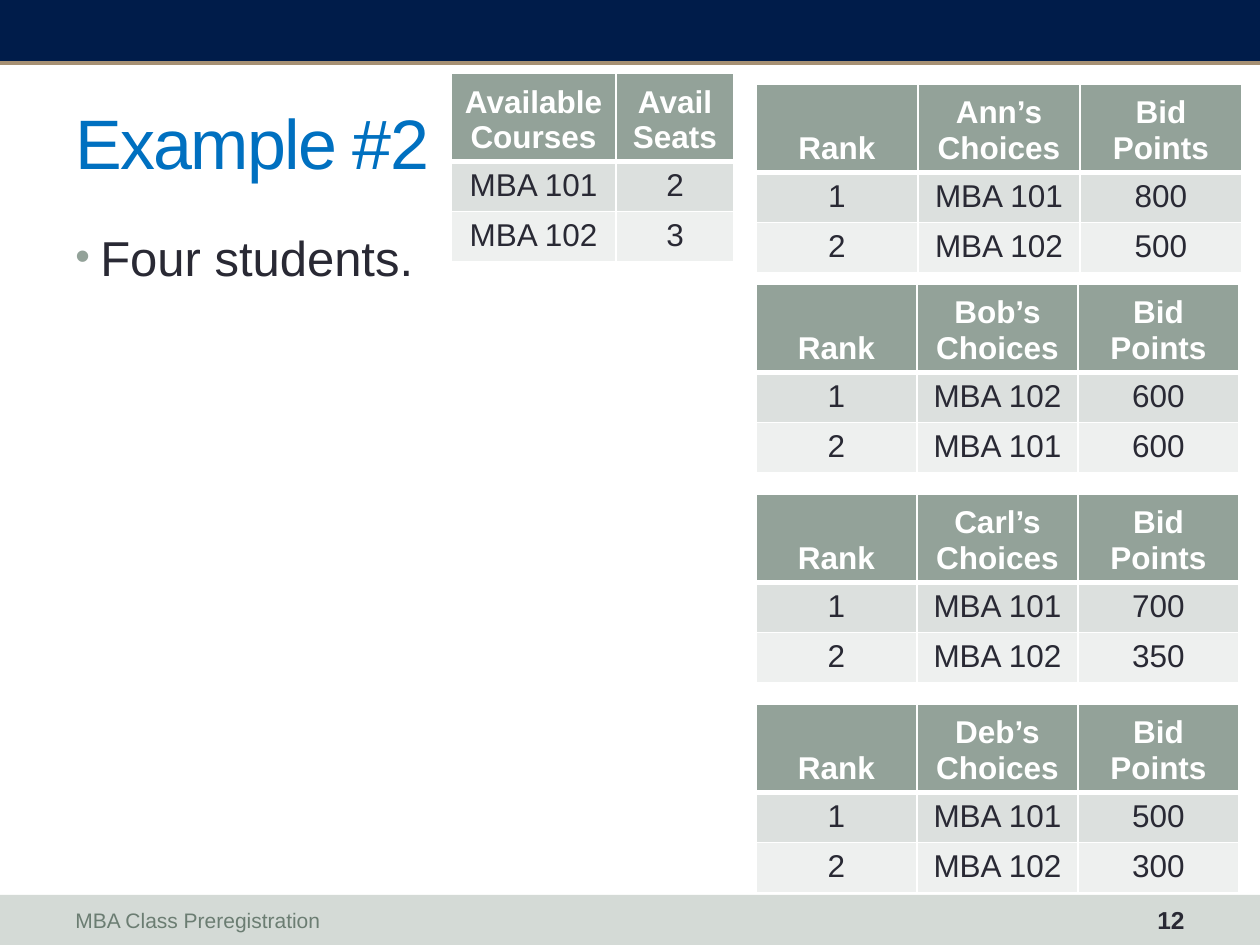
from dataclasses import dataclass

from lxml.etree import SubElement
from pptx import Presentation
from pptx.dml.color import RGBColor
from pptx.enum.shapes import MSO_CONNECTOR as Connector, MSO_SHAPE as Shape
from pptx.enum.text import MSO_ANCHOR as Anchor, PP_ALIGN as Align
from pptx.oxml.ns import qn
from pptx.util import Pt

EMU_PER_PX = 914400 / 126
SLIDE_WIDTH, SLIDE_HEIGHT = 1260, 945


@dataclass(frozen=True)
class Theme:
    font: str = "Arial"
    navy: str = "001C4A"
    gold: str = "A69073"
    footer_band: str = "D4DAD6"
    footer_text: str = "6B7D72"
    title: str = "0070C0"
    text: str = "292934"
    white: str = "FFFFFF"
    accent: str = "93A299"
    rows: tuple = ("DCE0DE", "EEF0EF")
    title_size: int = 40
    body_size: int = 28
    table_size: int = 18
    number_size: int = 14
    footer_size: int = 12


THEME = Theme()


def px(length):
    return round(length * EMU_PER_PX)


def box(*lengths):
    return [px(length) for length in lengths]


def style_runs(paragraph, size, color, bold=False):
    for run in paragraph.runs:
        run.font.name = THEME.font
        run.font.size = Pt(size)
        run.font.bold = bold
        run.font.color.rgb = RGBColor.from_string(color)


def add_band(slide, top, height, color):
    band = slide.shapes.add_shape(Shape.RECTANGLE, *box(0, top, SLIDE_WIDTH, height))
    band.shadow.inherit = False
    band.fill.solid()
    band.fill.fore_color.rgb = RGBColor.from_string(color)
    band.line.fill.background()


def add_rule(slide, y, color, width):
    rule = slide.shapes.add_connector(Connector.STRAIGHT, *box(0, y, SLIDE_WIDTH, y))
    rule.line.color.rgb = RGBColor.from_string(color)
    rule.line.width = Pt(width)
    SubElement(rule._element.spPr, qn("a:effectLst"))


def add_text(slide, bounds, text, size, color, bold=False,
             align=Align.LEFT, anchor=Anchor.MIDDLE):
    frame = slide.shapes.add_textbox(*box(*bounds)).text_frame
    frame.word_wrap = True
    frame.vertical_anchor = anchor
    frame.text = text
    paragraph = frame.paragraphs[0]
    paragraph.alignment = align
    style_runs(paragraph, size, color, bold)
    return paragraph


def add_bullet(paragraph, indent):
    properties = paragraph._p.get_or_add_pPr()
    properties.set("marL", str(px(indent)))
    properties.set("indent", str(-px(indent)))
    color = SubElement(properties, qn("a:buClr"))
    SubElement(color, qn("a:srgbClr"), val=THEME.accent)
    SubElement(properties, qn("a:buSzPct"), val="85000")
    SubElement(properties, qn("a:buFont"), typeface=THEME.font)
    SubElement(properties, qn("a:buChar"), char="•")


def add_borders(cell, top, bottom):
    properties = cell._tc.get_or_add_tcPr()
    for side, width in (("L", 1), ("R", 1), ("T", top), ("B", bottom)):
        line = SubElement(properties, qn(f"a:ln{side}"), w=str(Pt(width)))
        fill = SubElement(line, qn("a:solidFill"))
        SubElement(fill, qn("a:srgbClr"), val=THEME.white)


def format_cell(cell, text, row):
    header = row == 0
    add_borders(cell, top=3 if row == 1 else 1, bottom=3 if header else 1)
    cell.fill.solid()
    color = THEME.accent if header else THEME.rows[(row - 1) % 2]
    cell.fill.fore_color.rgb = RGBColor.from_string(color)
    cell.vertical_anchor = Anchor.BOTTOM if header else Anchor.TOP
    cell.text_frame.text = text
    paragraph = cell.text_frame.paragraphs[0]
    paragraph.alignment = Align.CENTER
    style_runs(paragraph, THEME.table_size, THEME.white if header else THEME.text, header)


def add_table(slide, left, top, column_widths, rows):
    heights = [82] + [48] * (len(rows) - 1)
    bounds = box(left, top, sum(column_widths), sum(heights))
    table = slide.shapes.add_table(len(rows), len(column_widths), *bounds).table
    for column, width in zip(table.columns, column_widths):
        column.width = px(width)
    for row, (values, height) in enumerate(zip(rows, heights)):
        table.rows[row].height = px(height)
        for column, text in enumerate(values):
            format_cell(table.cell(row, column), text, row)


def add_student_table(slide, top, column_width, name, choices):
    rows = [("Rank", f"{name}’s Choices", "Bid Points")]
    for rank, (course, points) in enumerate(choices, start=1):
        rows.append((str(rank), course, str(points)))
    add_table(slide, 756, top, [column_width] * 3, rows)


def main():
    presentation = Presentation()
    presentation.slide_width = px(SLIDE_WIDTH)
    presentation.slide_height = px(SLIDE_HEIGHT)
    slide = presentation.slides.add_slide(presentation.slide_layouts[6])

    add_band(slide, 895, 50, THEME.footer_band)
    add_band(slide, 0, 63, THEME.navy)
    add_rule(slide, 63, THEME.gold, 2)

    title = add_text(slide, (63, 73, 1134, 136), "Example #2",
                     THEME.title_size, THEME.title)
    title.runs[0]._r.get_or_add_rPr().set("spc", "-100")
    body = add_text(slide, (63, 221, 1134, 672), "Four students.",
                    THEME.body_size, THEME.text, anchor=Anchor.TOP)
    add_bullet(body, 25)
    add_text(slide, (63, 897, 840, 46), "MBA Class Preregistration",
             THEME.footer_size, THEME.footer_text)
    add_text(slide, (1103, 897, 94, 46), "12", THEME.number_size, THEME.text,
             bold=True, align=Align.RIGHT)

    first, second = "MBA 101", "MBA 102"
    add_table(slide, 451, 73, [165, 118],
              [("Available Courses", "Avail Seats"), (first, "2"), (second, "3")])
    add_student_table(slide, 84, 162, "Ann", [(first, 800), (second, 500)])
    students = {
        "Bob": [(second, 600), (first, 600)],
        "Carl": [(first, 700), (second, 350)],
        "Deb": [(first, 500), (second, 300)],
    }
    for index, (name, choices) in enumerate(students.items()):
        add_student_table(slide, 284 + 210 * index, 161, name, choices)

    presentation.save("out.pptx")


if __name__ == "__main__":
    main()
